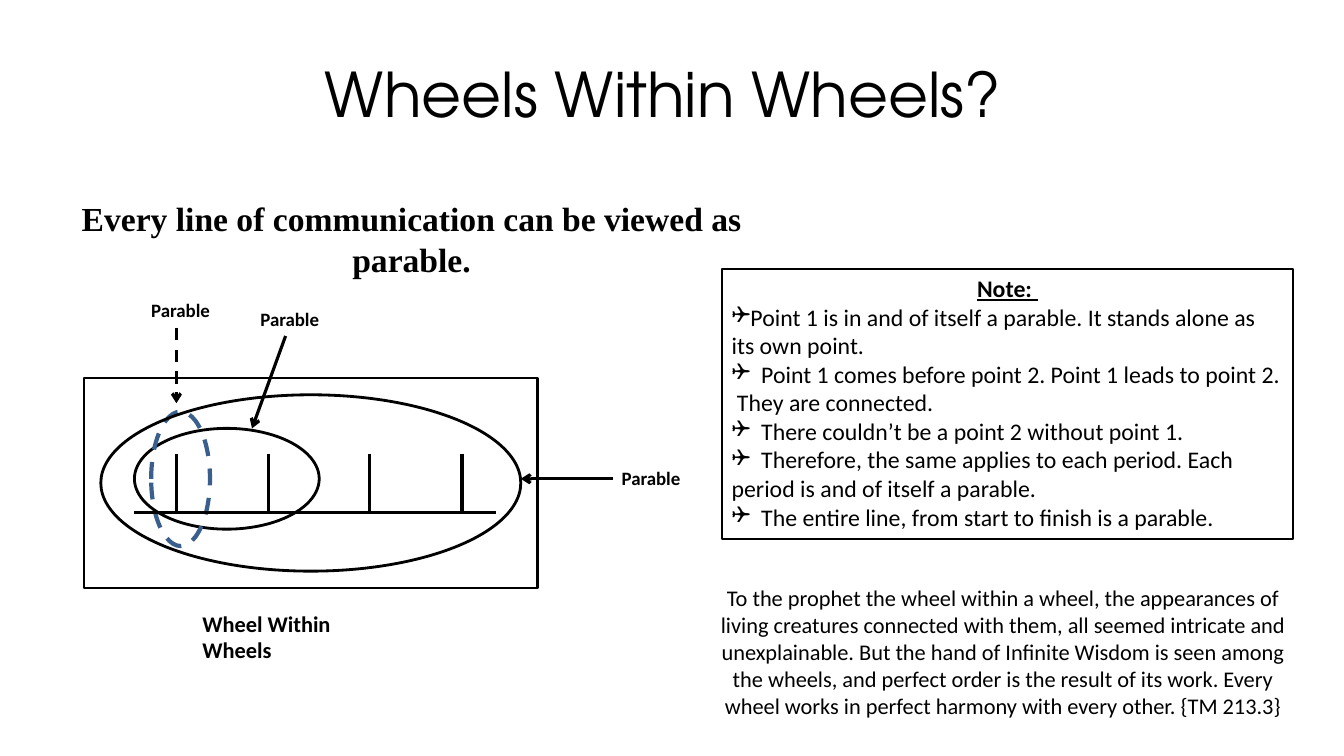
from lxml import etree
from pptx import Presentation
from pptx.dml.color import RGBColor
from pptx.enum import dml, shapes, text
from pptx.oxml.ns import qn
from pptx.util import Pt

COLORS = {"ink": "000000", "blue": "3A5F8C"}
SANS, SERIF, HEAD = "Calibri", "Times New Roman", "TeX Gyre Adventor"
MID, LEFT = text.PP_ALIGN.CENTER, text.PP_ALIGN.LEFT

TITLE = "Wheels Within Wheels? "
CLAIM = "Every line of communication can be viewed as parable."
CAPTION = "Wheel Within Wheels"
QUOTE = (
    "To the prophet the wheel within a wheel, the appearances of living "
    "creatures connected with them, all seemed intricate and unexplainable. "
    "But the hand of Infinite Wisdom is seen among the wheels, and perfect "
    "order is the result of its work. Every wheel works in perfect harmony "
    "with every other. {TM 213.3}"
)
NOTE = "Note: "
POINTS = [
    "Point 1 is in and of itself a parable. It stands alone as its own point.",
    "  Point 1 comes before point 2. Point 1 leads to point 2.  They are connected.",
    "  There couldn’t be a point 2 without point 1.",
    "  Therefore, the same applies to each period. Each period is and of itself a parable.",
    "  The entire line, from start to finish is a parable.",
]

# Boxes are left, top, width, height in points
FRAME = (60, 270, 324, 150)
WHEELS = [  # box, colour, line width, dashed
    ((96, 306, 132, 72), "ink", 2, False),
    ((108, 294, 42, 96), "blue", 3, True),
    ((72, 282, 300, 126), "ink", 2, False),
]
BASE, TOP = 366, 324
TICKS = [126, 192, 264, 330]
ARROWS = [  # from, to, dashed
    ((126, 234), (126, 288), True),
    ((204, 240), (180, 306), False),
    ((438, 342), (372, 342), False),
]
LABELS = [(66, 210, 126, 24), (144, 216, 126, 24), (420, 330, 90, 24)]
TEXTS = [  # box, words, font, size, bold, align
    ((18, 138, 552, 36), CLAIM, SERIF, 24, True, MID),
    ((137.5, 432, 156, 26.6), CAPTION, SANS, 16, True, LEFT),
    ((497.5, 414, 438, 104.4), QUOTE, SANS, 16, False, MID),
]
TEXTS += [(box, "Parable", SANS, 13.5, True, MID) for box in LABELS]

deck = Presentation()
deck.slide_width, deck.slide_height = Pt(960), Pt(540)
slide = deck.slides.add_slide(deck.slide_layouts[6])


def color(name):
    return RGBColor.from_string(COLORS[name])


def style(para, words, font, size, bold, align):
    para.text = words
    para.alignment = align
    para.font.name, para.font.size = font, Pt(size)
    para.font.bold = bold
    para.font.color.rgb = color("ink")


def write(box, words, font, size, bold, align):
    frame = slide.shapes.add_textbox(*map(Pt, box)).text_frame
    frame.word_wrap = True
    style(frame.paragraphs[0], words, font, size, bold, align)
    return frame


def stroke(line, name, width, dashed=False):
    line.color.rgb = color(name)
    line.width = Pt(width)
    if dashed:
        line.dash_style = dml.MSO_LINE.DASH


def outline(kind, box, name, width, dashed=False):
    shape = slide.shapes.add_shape(kind, *map(Pt, box))
    shape.shadow.inherit = False
    shape.fill.background()
    stroke(shape.line, name, width, dashed)
    return shape


def connect(start, end, dashed=False, arrow=False):
    line = slide.shapes.add_connector(
        shapes.MSO_CONNECTOR.STRAIGHT, *map(Pt, start + end))
    stroke(line.line, "ink", 2.25, dashed)
    props = line._element.spPr
    if arrow:
        etree.SubElement(props.find(qn("a:ln")), qn("a:tailEnd"), type="arrow")
    etree.SubElement(props, qn("a:effectLst"))


def bullet(para, mark):
    props = para._p.get_or_add_pPr()
    props.set("marL", "0")
    props.set("indent", "0")
    etree.SubElement(props, qn("a:buFont"), typeface="Wingdings")
    etree.SubElement(props, qn("a:buChar"), char=mark)
    # Schema order puts the run defaults after the bullet
    props.append(props.find(qn("a:defRPr")))


head = write((48, 21.6, 864, 90), TITLE, HEAD, 44, False, MID)
head.vertical_anchor = text.MSO_ANCHOR.MIDDLE

outline(shapes.MSO_SHAPE.RECTANGLE, FRAME, "ink", 2)
for wheel in WHEELS:
    outline(shapes.MSO_SHAPE.OVAL, *wheel)
for x in TICKS:
    connect((x, TOP), (x, BASE))
for start, end, dashed in ARROWS:
    connect(start, end, dashed, arrow=True)
connect((96, BASE), (354, BASE))

for item in TEXTS:
    write(*item)

note = outline(shapes.MSO_SHAPE.RECTANGLE, (515.5, 192, 408, 193), "ink", 1.5)
body = note.text_frame
body.word_wrap = True
body.vertical_anchor = text.MSO_ANCHOR.TOP
style(body.paragraphs[0], NOTE, SANS, 17, True, MID)
body.paragraphs[0].font.underline = True
for point in POINTS:
    para = body.add_paragraph()
    style(para, point, SANS, 17, False, LEFT)
    bullet(para, "❑")

deck.save("out.pptx")
